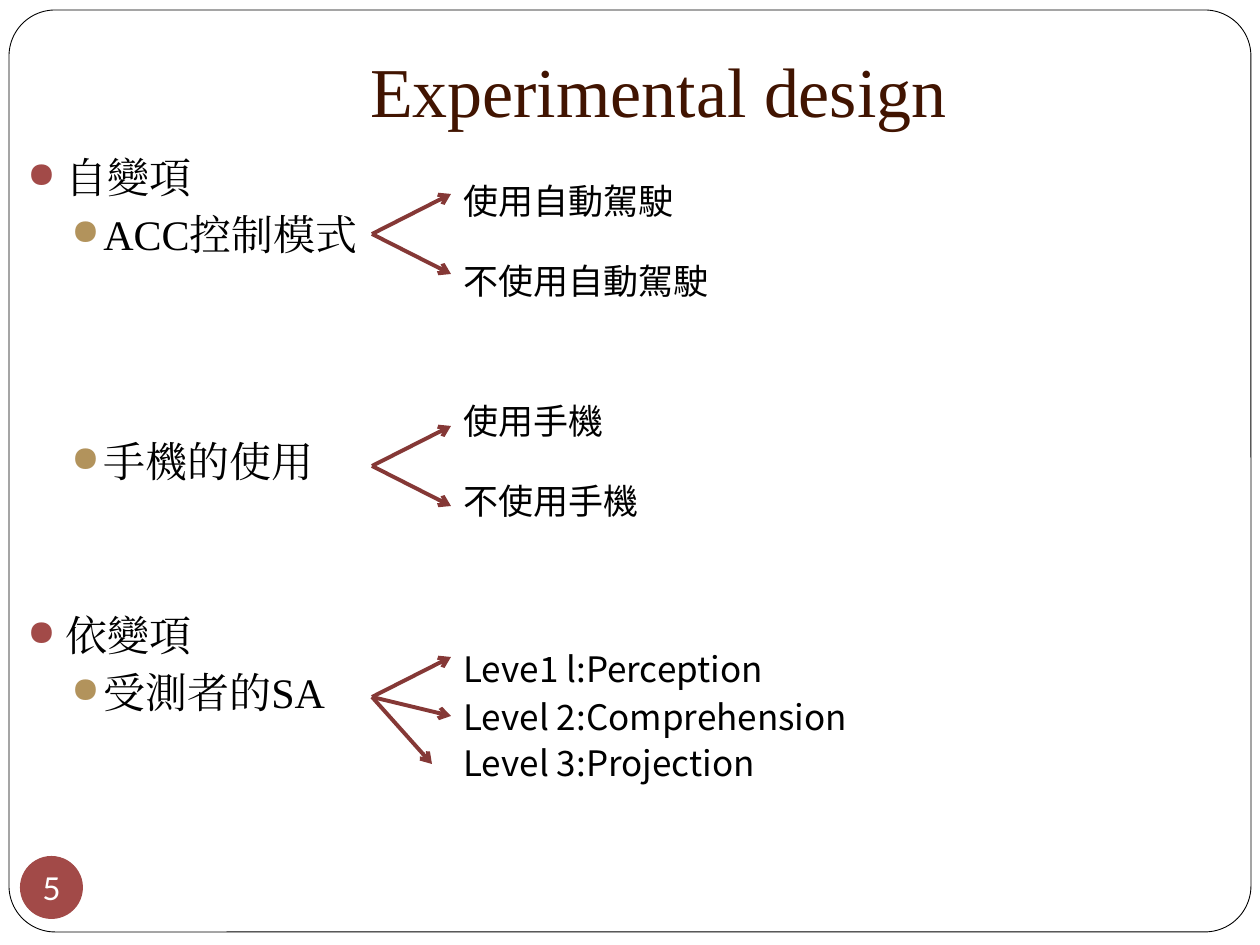
from typing import NamedTuple

from lxml import etree
from pptx import Presentation
from pptx import util as u
from pptx.dml.color import RGBColor
from pptx.enum import shapes, text
from pptx.oxml.ns import qn

PX = 914400 / 126
SERIF, SANS = "Times New Roman", "Noto Sans CJK SC"
RED, GOLD, ARROW, BLACK, WHITE = "A24A48", "B2935C", "853836", "000000", "FFFFFF"


class Box(NamedTuple):
    left: int
    top: int
    width: int
    height: int


class Option(NamedTuple):
    label: str
    top: int
    width: int
    dx: int
    dy: int


class Branch(NamedTuple):
    origin_y: int
    anchor: text.MSO_ANCHOR
    options: list[Option]


class Bullet(NamedTuple):
    label: str
    level: int
    before: float


BRANCHES = [
    Branch(234, text.MSO_ANCHOR.TOP, [
        Option("使用自動駕駛", 173, 318, 79, -40),
        Option("不使用自動駕駛", 253, 318, 79, 40),
    ]),
    Branch(466, text.MSO_ANCHOR.TOP, [
        Option("使用手機", 393, 318, 79, -40),
        Option("不使用手機", 473, 318, 79, 40),
    ]),
    Branch(697, text.MSO_ANCHOR.MIDDLE, [
        Option("Leve1 l:Perception", 641, 427, 79, -40),
        Option("Level 2:Comprehension", 689, 556, 79, 19),
        Option("Level 3:Projection", 735, 576, 60, 67),
    ]),
]
BULLETS = [
    Bullet("自變項", 0, 0),
    Bullet("ACC控制模式", 1, 3.7),
    Bullet("手機的使用", 1, 100.7),
    Bullet("依變項", 0, 70.4),
    Bullet("受測者的SA", 1, 3.7),
]
LEVELS = [(38, 38, RED), (76, 32, GOLD)]


def px(n: float) -> int:
    """Turn pixels into EMU."""
    return round(n * PX)


def color(value: str) -> RGBColor:
    """Turn a hex string into a colour."""
    return RGBColor.from_string(value)


def apply(target, formats: dict) -> None:
    """Set attributes from a dict of format values."""
    for name, value in formats.items():
        setattr(target, name, value)


def add_run(p, label: str, size: int, font: str, fill: str) -> None:
    """Add a run with one font for Latin and East Asian text."""
    r = p.add_run()
    r.text = label
    apply(r.font, {"size": u.Pt(size), "name": font})
    r.font.color.rgb = color(fill)
    etree.SubElement(r.font._element, qn("a:ea"), typeface=font)


def add_preset(s, kind, box: Box, fill: str):
    """Add a filled preset shape without shadow or line."""
    sp = s.shapes.add_shape(kind, *map(px, box))
    sp.shadow.inherit = False
    sp.fill.solid()
    sp.fill.fore_color.rgb = color(fill)
    sp.line.fill.background()
    return sp


def add_textbox(s, box: Box, **formats):
    """Add a wrapping text box and return its text frame."""
    tf = s.shapes.add_textbox(*map(px, box)).text_frame
    apply(tf, {"word_wrap": True, **formats})
    return tf


def add_arrow(s, x: int, y: int, dx: int, dy: int) -> None:
    """Add an arrow from a point by an offset."""
    ends = map(px, (x, y, x + dx, y + dy))
    c = s.shapes.add_connector(shapes.MSO_CONNECTOR.STRAIGHT, *ends)
    c.line.color.rgb = color(ARROW)
    c.line.width = u.Pt(2.25)
    etree.SubElement(c.line._get_or_add_ln(), qn("a:tailEnd"), type="arrow")
    etree.SubElement(c._element.spPr, qn("a:effectLst"))


def add_branch(s, branch: Branch) -> None:
    """Add the arrows and labels of one variable."""
    for o in branch.options:
        add_arrow(s, 372, branch.origin_y, o.dx, o.dy)
        tf = add_textbox(s, Box(451, o.top, o.width, 55), vertical_anchor=branch.anchor,
                         auto_size=text.MSO_AUTO_SIZE.SHAPE_TO_FIT_TEXT)
        add_run(tf.paragraphs[0], o.label, 20, SANS, BLACK)


def add_bullet(p, bullet: Bullet) -> None:
    """Fill a paragraph as a bulleted item."""
    margin, hang, fill = LEVELS[bullet.level]
    apply(p, {"level": bullet.level, "space_before": u.Pt(bullet.before),
              "line_spacing": u.Pt(29)})
    pPr = p._p.get_or_add_pPr()
    pPr.set("marL", str(px(margin)))
    pPr.set("indent", str(-px(hang)))
    clr = etree.SubElement(pPr, qn("a:buClr"))
    etree.SubElement(clr, qn("a:srgbClr"), val=fill)
    etree.SubElement(pPr, qn("a:buSzPct"), val="85000")
    etree.SubElement(pPr, qn("a:buChar"), char="●")
    add_run(p, bullet.label, 24, SERIF, BLACK)


def main() -> None:
    """Build and save the slide."""
    prs = Presentation()
    apply(prs, {"slide_width": px(1260), "slide_height": px(945)})
    s = prs.slides.add_slide(prs.slide_layouts[6])

    frame = add_preset(s, shapes.MSO_SHAPE.ROUNDED_RECTANGLE, Box(9, 10, 1242, 922), WHITE)
    frame.adjustments[0] = 0.05
    frame.line.color.rgb = color(BLACK)
    frame.line.width = u.Pt(0.5)

    tf = add_textbox(s, Box(123, -14, 1071, 158), vertical_anchor=text.MSO_ANCHOR.BOTTOM,
                     margin_bottom=u.Inches(0.1))
    tf.paragraphs[0].alignment = text.PP_ALIGN.CENTER
    add_run(tf.paragraphs[0], "Experimental design", 40, SERIF, "411401")

    badge = add_preset(s, shapes.MSO_SHAPE.OVAL, Box(20, 856, 63, 63), RED)
    tf = badge.text_frame
    margins = dict.fromkeys(("margin_left", "margin_top", "margin_right", "margin_bottom"), 0)
    apply(tf, {"word_wrap": False, "vertical_anchor": text.MSO_ANCHOR.MIDDLE, **margins})
    tf.paragraphs[0].alignment = text.PP_ALIGN.CENTER
    add_run(tf.paragraphs[0], "5", 18, "Lato", WHITE)

    tf = add_textbox(s, Box(15, 145, 1230, 753))
    for i, bullet in enumerate(BULLETS):
        add_bullet(tf.add_paragraph() if i else tf.paragraphs[0], bullet)

    for branch in BRANCHES:
        add_branch(s, branch)
    prs.save("out.pptx")


if __name__ == "__main__":
    main()
